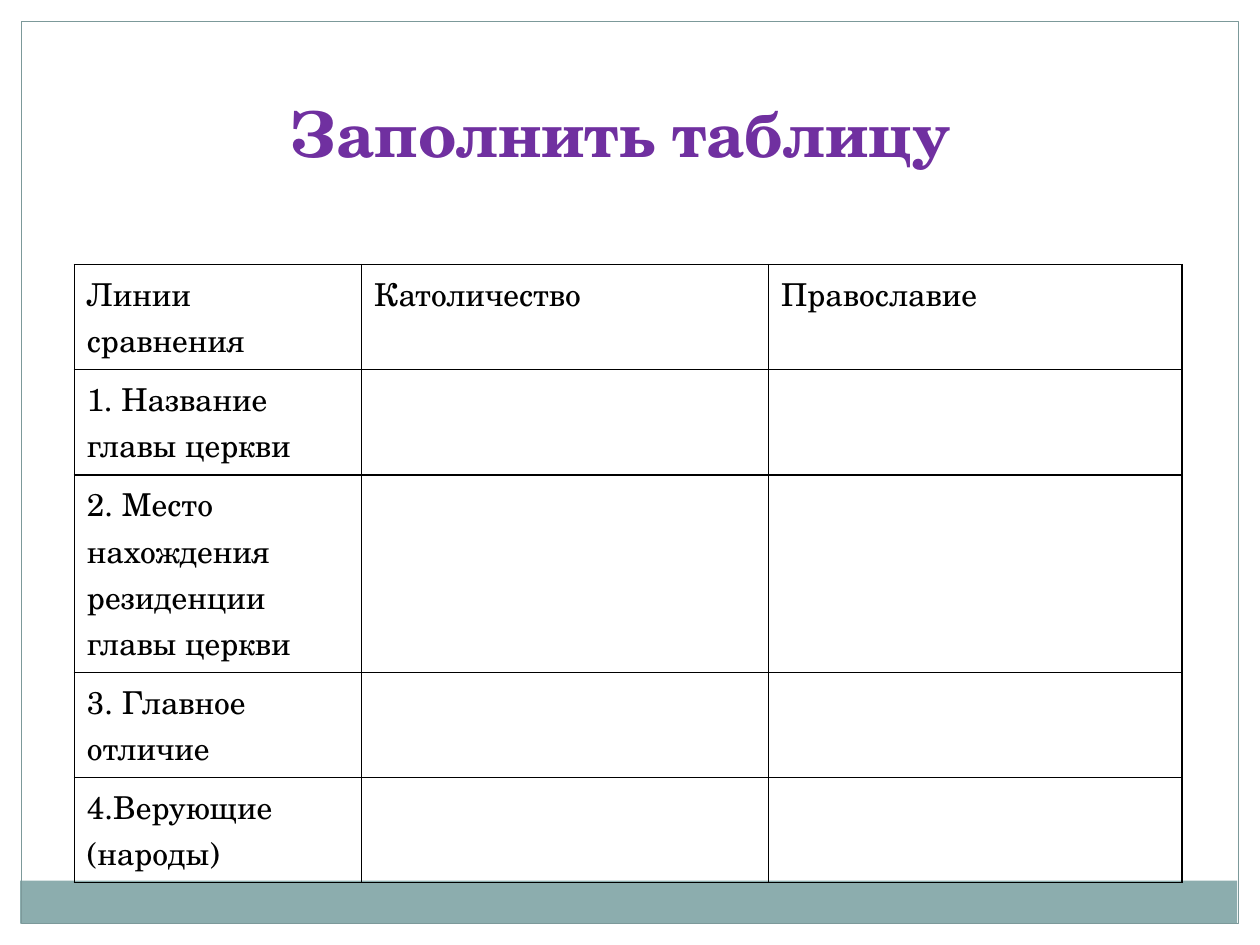
from typing import NamedTuple, Optional

from lxml.etree import SubElement
from pptx import Presentation
from pptx.dml.color import RGBColor
from pptx.enum.shapes import MSO_SHAPE as Preset
from pptx.enum.text import MSO_ANCHOR as Anchor, PP_ALIGN as Align
from pptx.oxml.ns import qn
from pptx.util import Inches, Pt

WIDTH, HEIGHT = 10, 7.5
FONT = "TeX Gyre Schola"
COLORS = {"edge": "FFFFFF", "band": "8CADAE", "frame": "7C999A",
          "title": "7030A0", "ink": "000000"}


class Area(NamedTuple):
    """A rectangle in inches."""
    left: float
    top: float
    width: float
    height: float

    def lengths(self) -> list:
        return [Inches(value) for value in self]


class Panel(NamedTuple):
    area: Area
    fill: Optional[str] = None
    line: Optional[str] = None


MARGIN = 0.17
INNER = WIDTH - 2 * MARGIN
PANELS = [
    Panel(Area(0, 0, WIDTH, MARGIN), fill="edge"),
    Panel(Area(WIDTH - MARGIN, 0, MARGIN, HEIGHT), fill="edge"),
    Panel(Area(0, 0, MARGIN, HEIGHT), fill="edge"),
    Panel(Area(0.16, 6.99, INNER, 0.34), fill="band"),
    Panel(Area(MARGIN, MARGIN, INNER, HEIGHT - 2 * MARGIN), line="frame"),
]
TITLE_AREA = Area(0.67, 0.6, 8.5, 0.8)
TABLE_LEFT, TABLE_TOP = 0.59, 2.1
COLUMNS = [2.28, 3.23, 3.28]
ROW_HEIGHT = 0.71  # least height: rows grow with their text
HEADERS = ["Линии сравнения", "Католичество", "Православие"]
CRITERIA = [
    "1. Название главы церкви",
    "2. Место нахождения резиденции главы церкви",
    "3. Главное отличие",
    "4.Верующие (народы)",
]


def color(name: str) -> RGBColor:
    return RGBColor.from_string(COLORS[name])


def write(frame, text: str, *, size: float, ink: str = "ink", bold: bool = False,
          align=Align.LEFT, anchor=Anchor.TOP) -> None:
    frame.word_wrap = True
    frame.vertical_anchor = anchor
    para = frame.paragraphs[0]
    para.alignment = align
    span = para.add_run()
    span.text = text
    span.font.name = FONT
    span.font.size = Pt(size)
    span.font.bold = bold
    span.font.color.rgb = color(ink)


def draw_panel(page, panel: Panel) -> None:
    box = page.shapes.add_shape(Preset.RECTANGLE, *panel.area.lengths())
    box.shadow.inherit = False
    if panel.fill:
        box.fill.solid()
        box.fill.fore_color.rgb = color(panel.fill)
    else:
        box.fill.background()
    if panel.line:
        box.line.color.rgb = color(panel.line)
        box.line.width = Pt(0.75)
    else:
        box.line.fill.background()


def style_cell(cell) -> None:
    """Give a cell a black border and no fill."""
    properties = cell._tc.get_or_add_tcPr()
    for side in ("a:lnL", "a:lnR", "a:lnT", "a:lnB"):
        border = SubElement(properties, qn(side), w=str(Pt(1)))
        paint = SubElement(border, qn("a:solidFill"))
        SubElement(paint, qn("a:srgbClr"), val=COLORS["ink"])
    cell.fill.background()


def draw_table(page) -> None:
    rows = [HEADERS] + [[label, "", ""] for label in CRITERIA]
    area = Area(TABLE_LEFT, TABLE_TOP, sum(COLUMNS), ROW_HEIGHT * len(rows))
    table = page.shapes.add_table(len(rows), len(COLUMNS), *area.lengths()).table
    table.first_row = table.horz_banding = False
    for column, width in zip(table.columns, COLUMNS):
        column.width = Inches(width)
    for row, texts in zip(table.rows, rows):
        row.height = Inches(ROW_HEIGHT)
        for cell, text in zip(row.cells, texts):
            style_cell(cell)
            if text:
                write(cell.text_frame, text, size=18)


def main() -> None:
    deck = Presentation()
    deck.slide_width, deck.slide_height = Inches(WIDTH), Inches(HEIGHT)
    page = deck.slides.add_slide(deck.slide_layouts[5])

    # Edges, band and frame
    for panel in PANELS:
        draw_panel(page, panel)

    # Title
    title = page.shapes.title
    title.left, title.top, title.width, title.height = TITLE_AREA.lengths()
    write(title.text_frame, "Заполнить таблицу", size=36, ink="title", bold=True,
          align=Align.CENTER, anchor=Anchor.BOTTOM)

    # Comparison table
    draw_table(page)
    deck.save("out.pptx")


if __name__ == "__main__":
    main()
